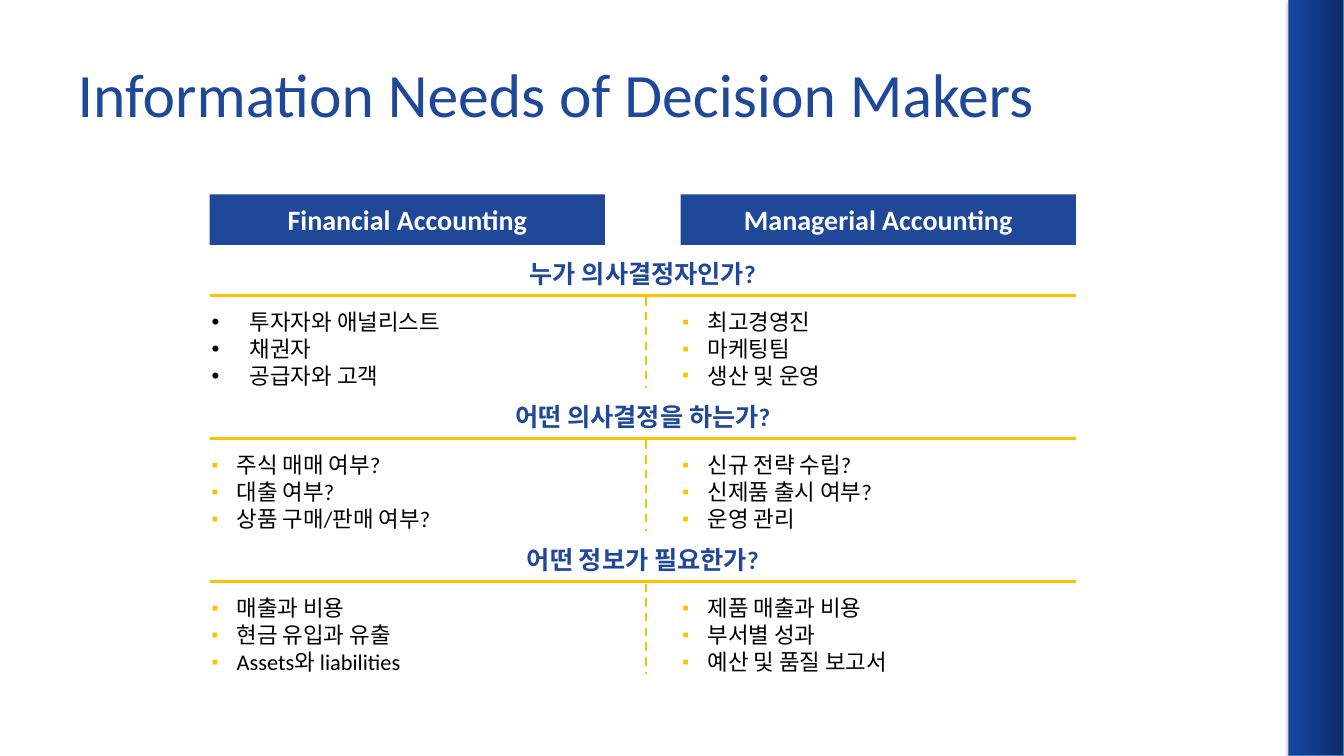
from lxml.etree import SubElement
from pptx import Presentation
from pptx.dml.color import RGBColor
from pptx.enum.dml import MSO_LINE
from pptx.enum.shapes import MSO_CONNECTOR, MSO_SHAPE
from pptx.enum.text import MSO_ANCHOR, MSO_AUTO_SIZE, PP_ALIGN
from pptx.oxml import parse_xml
from pptx.oxml.ns import nsdecls, qn
from pptx.util import Pt

PX = 9144
BLUE, GOLD, BLACK, WHITE = "1F4899", "FFC000", "000000", "FFFFFF"
ROW_TOP, ROW_PITCH = 251, 142
RULE_LEFT, RULE_RIGHT, DIVIDER_X = 208, 1067, 641

HEADERS = [(208, "Financial Accounting"), (675, "Managerial Accounting")]
LIST_LEFTS = (200, 667)
SQUARE = dict(char="▪", indent=25, color=GOLD, size=85)
DOT = dict(char="•", indent=38)
ROWS = [
    ("누가 의사결정자인가?",
     (["투자자와 애널리스트", "채권자", "공급자와 고객"], DOT),
     (["최고경영진", "마케팅팀", "생산 및 운영"], SQUARE)),
    ("어떤 의사결정을 하는가?",
     (["주식 매매 여부?", "대출 여부?", "상품 구매/판매 여부?"], SQUARE),
     (["신규 전략 수립?", "신제품 출시 여부?", "운영 관리"], SQUARE)),
    ("어떤 정보가 필요한가?",
     (["매출과 비용", "현금 유입과 유출", "Assets와 liabilities"], SQUARE),
     (["제품 매출과 비용", "부서별 성과", "예산 및 품질 보고서"], SQUARE)),
]


def rgb(value):
    return RGBColor.from_string(value)


def px(*values):
    return [v * PX for v in values]


def add_bullet(p, char, indent, color=None, size=None):
    pPr = p._p.get_or_add_pPr()
    pPr.set("marL", str(indent * PX))
    pPr.set("indent", str(-indent * PX))
    if color:
        SubElement(SubElement(pPr, qn("a:buClr")), qn("a:srgbClr"), val=color)
    if size:
        SubElement(pPr, qn("a:buSzPct"), val=str(size * 1000))
    SubElement(pPr, qn("a:buFont"), typeface="Arial")
    SubElement(pPr, qn("a:buChar"), char=char)


def write(tf, lines, size, color=BLACK, bold=False, align=PP_ALIGN.LEFT,
          anchor=MSO_ANCHOR.TOP, fit=MSO_AUTO_SIZE.NONE, bullet=None):
    tf.word_wrap = True
    tf.auto_size = fit
    tf.vertical_anchor = anchor
    for i, line in enumerate(lines):
        p = tf.add_paragraph() if i else tf.paragraphs[0]
        p.alignment = align
        if bullet:
            add_bullet(p, **bullet)
        r = p.add_run()
        r.text = line
        r.font.name = "Calibri"
        r.font.size = Pt(size)
        r.font.bold = bold
        r.font.color.rgb = rgb(color)


class Deck:
    def __init__(self, width, height):
        self.prs = Presentation()
        self.prs.slide_width, self.prs.slide_height = px(width, height)
        self.s = self.prs.slides.add_slide(self.prs.slide_layouts[5])

    def title(self, box, text):
        sp = self.s.shapes.title
        sp.left, sp.top, sp.width, sp.height = px(*box)
        write(sp.text_frame, [text], 44, BLUE, anchor=MSO_ANCHOR.MIDDLE)

    def rect(self, box):
        sp = self.s.shapes.add_shape(MSO_SHAPE.RECTANGLE, *px(*box))
        sp.shadow.inherit = False
        return sp

    def side_bar(self, box, stops):
        sp = self.rect(box)
        sp.line.color.rgb = rgb("4B7EBC")
        sp.line.width = Pt(0.75)
        marks = "".join(f'<a:gs pos="{pos * 1000}"><a:srgbClr val="{color}"/></a:gs>'
                        for pos, color in stops)
        spPr = sp._element.spPr
        spPr.find(qn("a:prstGeom")).addnext(parse_xml(
            f'<a:gradFill {nsdecls("a")}><a:gsLst>{marks}</a:gsLst>'
            '<a:lin ang="10800000" scaled="0"/></a:gradFill>'))
        shadow = SubElement(spPr.find(qn("a:effectLst")), qn("a:outerShdw"),
                            blurRad=str(Pt(3.1)), dist=str(Pt(1.8)),
                            dir="5400000", rotWithShape="0")
        black = SubElement(shadow, qn("a:srgbClr"), val=BLACK)
        SubElement(black, qn("a:alpha"), val="35000")

    def header(self, box, text):
        sp = self.rect(box)
        sp.fill.solid()
        sp.fill.fore_color.rgb = rgb(BLUE)
        sp.line.fill.background()
        write(sp.text_frame, [text], 20, WHITE, bold=True,
              align=PP_ALIGN.CENTER, anchor=MSO_ANCHOR.MIDDLE)

    def text(self, box, lines, size, **fmt):
        sp = self.s.shapes.add_textbox(*px(*box))
        write(sp.text_frame, lines, size, **fmt)

    def line(self, ends, width, dash=None):
        ln = self.s.shapes.add_connector(MSO_CONNECTOR.STRAIGHT, *px(*ends))
        ln.line.color.rgb = rgb(GOLD)
        ln.line.width = Pt(width)
        if dash:
            ln.line.dash_style = dash
        SubElement(ln._element.spPr, qn("a:effectLst"))

    def question_row(self, top, question, columns):
        self.text((RULE_LEFT, top, RULE_RIGHT - RULE_LEFT, 40), [question], 18,
                  color=BLUE, bold=True, align=PP_ALIGN.CENTER,
                  fit=MSO_AUTO_SIZE.SHAPE_TO_FIT_TEXT)
        self.line((DIVIDER_X, top + 44, DIVIDER_X, top + 134), 1.5, MSO_LINE.DASH)
        self.line((RULE_LEFT, top + 42, RULE_RIGHT, top + 42), 2.25)
        for left, (items, bullet) in zip(LIST_LEFTS, columns):
            self.text((left, top + 50, 400, 100), items, 16, bullet=bullet)


def main():
    deck = Deck(1333, 750)
    deck.side_bar((1278, 0, 55, 750),
                  [(0, "0D2960"), (50, "123A89"), (100, "1645A2")])
    deck.title((67, 30, 1200, 125), "Information Needs of Decision Makers")
    for left, text in HEADERS:
        deck.header((left, 193, 392, 50), text)
    for i, (question, *columns) in enumerate(ROWS):
        deck.question_row(ROW_TOP + i * ROW_PITCH, question, columns)
    deck.prs.save("out.pptx")


if __name__ == "__main__":
    main()
